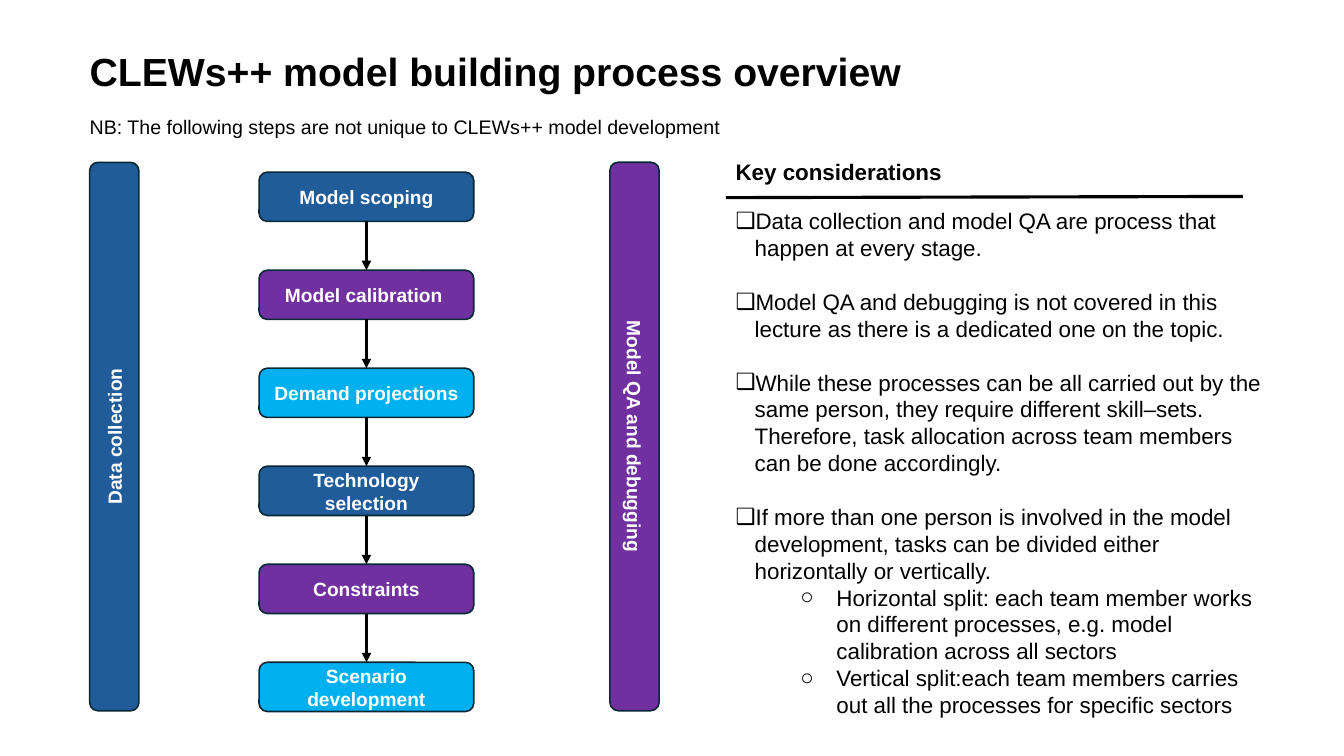
import pptx
import pptx.util
import pptx.dml.color
import pptx.enum.shapes
import pptx.enum.text
import pptx.oxml.ns
from lxml import etree
from pptx.util import Cm, Pt

# Content
TITLE = "CLEWs++ model building process overview"
NOTE = "NB: The following steps are not unique to CLEWs++ model development"
STEPS = ["Model scoping", "Model calibration ", "Demand projections",
         "Technology selection", "Constraints", "Scenario development"]
# label, centre x in cm, rotation
SIDE_BARS = [("Data collection", 2.88, 270, "1F5C99"),
             ("Model QA and debugging", 15.99, 90, "7030A0")]
HEADING = "Key considerations"
# style, space before in points, text
CONSIDERATIONS = [
    ("main", 16.1, "Data collection and model QA are process that happen at every stage."),
    ("main", 19.2, "Model QA and debugging is not covered in this lecture as there is "
                   "a dedicated one on the topic."),
    ("main", 19.2, "While these processes can be all carried out by the same person, they "
                   "require different skill–sets. Therefore, task allocation across team "
                   "members can be done accordingly."),
    ("main", 19.2, "If more than one person is involved in the model development, tasks "
                   "can be divided either horizontally or vertically."),
    ("sub", 0, "Horizontal split: each team member works on different processes, "
               "e.g. model calibration across all sectors"),
    ("sub", 0, "Vertical split:each team members carries out all the processes "
               "for specific sectors"),
]
# symbol, level, left margin, first-line indent
BULLETS = {"main": ("❑", 0, Cm(0.48), Cm(-0.56)),
           "sub": ("○", 1, Cm(2.54), Cm(-0.91))}

# Look
FONT = "Arial"
BLACK, WHITE, OUTLINE = "000000", "FFFFFF", "082836"
STEP_COLOURS = ["1F5C99", "7030A0", "00B0F0"]

# Layout in cm
STEP_LEFT, STEP_TOP, STEP_PITCH = 6.53, 4.34, 2.47
STEP_WIDTH, BAR_THICKNESS = 5.41, 1.24
BAR_LENGTH, BAR_MIDDLE = 13.82, 11.0

presentation = pptx.Presentation()
presentation.slide_width, presentation.slide_height = Cm(33.87), Cm(19.05)
slide = presentation.slides.add_slide(presentation.slide_layouts[6])


def colour(hex_string):
    return pptx.dml.color.RGBColor.from_string(hex_string)


def add_run(paragraph, text, size, text_colour=BLACK, bold=False):
    run = paragraph.add_run()
    run.text = text
    run.font.name, run.font.size, run.font.bold = FONT, Pt(size), bold
    run.font.color.rgb = colour(text_colour)


def add_text_box(left, top, width, height):
    frame = slide.shapes.add_textbox(Cm(left), Cm(top), Cm(width), Cm(height)).text_frame
    frame.word_wrap = True
    return frame


def add_bar(label, left, top, width, fill, rotation=0):
    shape = slide.shapes.add_shape(pptx.enum.shapes.MSO_SHAPE.ROUNDED_RECTANGLE,
                                   Cm(left), Cm(top), Cm(width), Cm(BAR_THICKNESS))
    shape.shadow.inherit = False
    shape.rotation = rotation
    shape.fill.solid()
    shape.fill.fore_color.rgb = colour(fill)
    shape.line.color.rgb = colour(OUTLINE)
    shape.line.width = Pt(1.14)
    frame = shape.text_frame
    frame.word_wrap = True
    frame.vertical_anchor = pptx.enum.text.MSO_ANCHOR.MIDDLE
    frame.margin_left = frame.margin_right = Cm(0.2)
    frame.margin_top = frame.margin_bottom = Cm(0.1)
    paragraph = frame.paragraphs[0]
    paragraph.alignment = pptx.enum.text.PP_ALIGN.CENTER
    add_run(paragraph, label, 13.7, WHITE, True)
    return shape


def add_line(start_x, start_y, end_x, end_y, width):
    line = slide.shapes.add_connector(pptx.enum.shapes.MSO_CONNECTOR.STRAIGHT,
                                      Cm(start_x), Cm(start_y), Cm(end_x), Cm(end_y))
    line.line.color.rgb = colour(BLACK)
    line.line.width = Pt(width)
    etree.SubElement(line._element.spPr, pptx.oxml.ns.qn("a:effectLst"))
    return line


def add_bullet(paragraph, style):
    symbol, level, margin, indent = BULLETS[style]
    paragraph.level = level
    properties = paragraph._p.get_or_add_pPr()
    properties.set("marL", str(margin))
    properties.set("indent", str(indent))
    bullet_colour = etree.SubElement(properties, pptx.oxml.ns.qn("a:buClr"))
    etree.SubElement(bullet_colour, pptx.oxml.ns.qn("a:srgbClr")).set("val", BLACK)
    etree.SubElement(properties, pptx.oxml.ns.qn("a:buFont")).set("typeface", FONT)
    etree.SubElement(properties, pptx.oxml.ns.qn("a:buChar")).set("char", symbol)


# Title and note
title = add_text_box(2.01, -0.64, 29.21, 3.15)
title.vertical_anchor = pptx.enum.text.MSO_ANCHOR.BOTTOM
title.paragraphs[0].line_spacing = 0.9
add_run(title.paragraphs[0], TITLE, 28, bold=True)

note = add_text_box(2.01, 2.77, 29.21, 0.86)
note.paragraphs[0].alignment = pptx.enum.text.PP_ALIGN.JUSTIFY
add_run(note.paragraphs[0], NOTE, 14)

# Process steps joined by arrows
steps = [add_bar(label, STEP_LEFT, STEP_TOP + index * STEP_PITCH, STEP_WIDTH,
                 STEP_COLOURS[index % len(STEP_COLOURS)])
         for index, label in enumerate(STEPS)]
for upper, lower in zip(steps, steps[1:]):
    arrow = add_line(0, 0, 0, 0, 2.28)
    arrow.begin_connect(upper, 2)
    arrow.end_connect(lower, 0)
    outline = arrow.line._get_or_add_ln()
    etree.SubElement(outline, pptx.oxml.ns.qn("a:tailEnd")).set("type", "triangle")

# Upright bars on both sides
for label, centre, rotation, fill in SIDE_BARS:
    add_bar(label, centre - BAR_LENGTH / 2, BAR_MIDDLE - BAR_THICKNESS / 2,
            BAR_LENGTH, fill, rotation)

# Key considerations
considerations = add_text_box(18.29, 3.86, 13.97, 15.39)
add_run(considerations.paragraphs[0], HEADING, 16, bold=True)
for style, space_before, text in CONSIDERATIONS:
    paragraph = considerations.add_paragraph()
    paragraph.space_before = Pt(space_before)
    add_bullet(paragraph, style)
    add_run(paragraph, text, 16)
add_line(18.29, 4.98, 31.32, 4.95, 2.25)

presentation.save("out.pptx")
